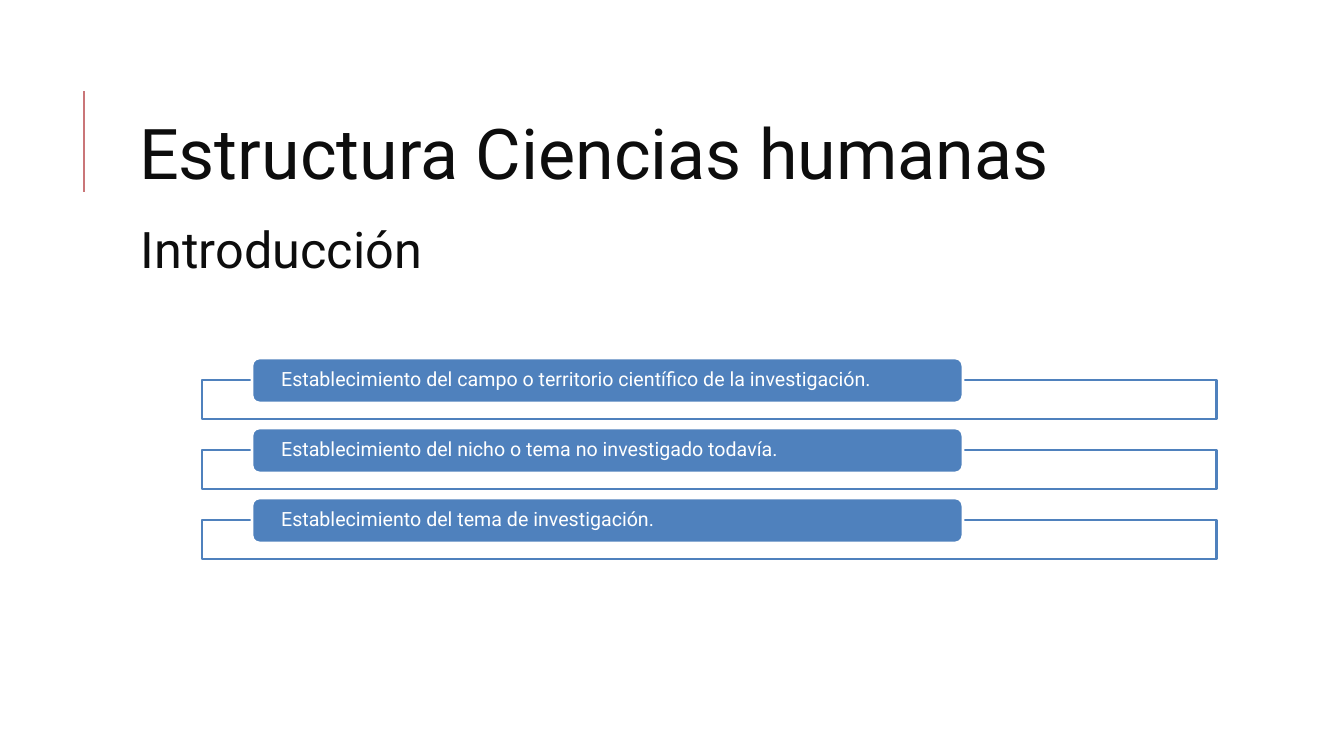
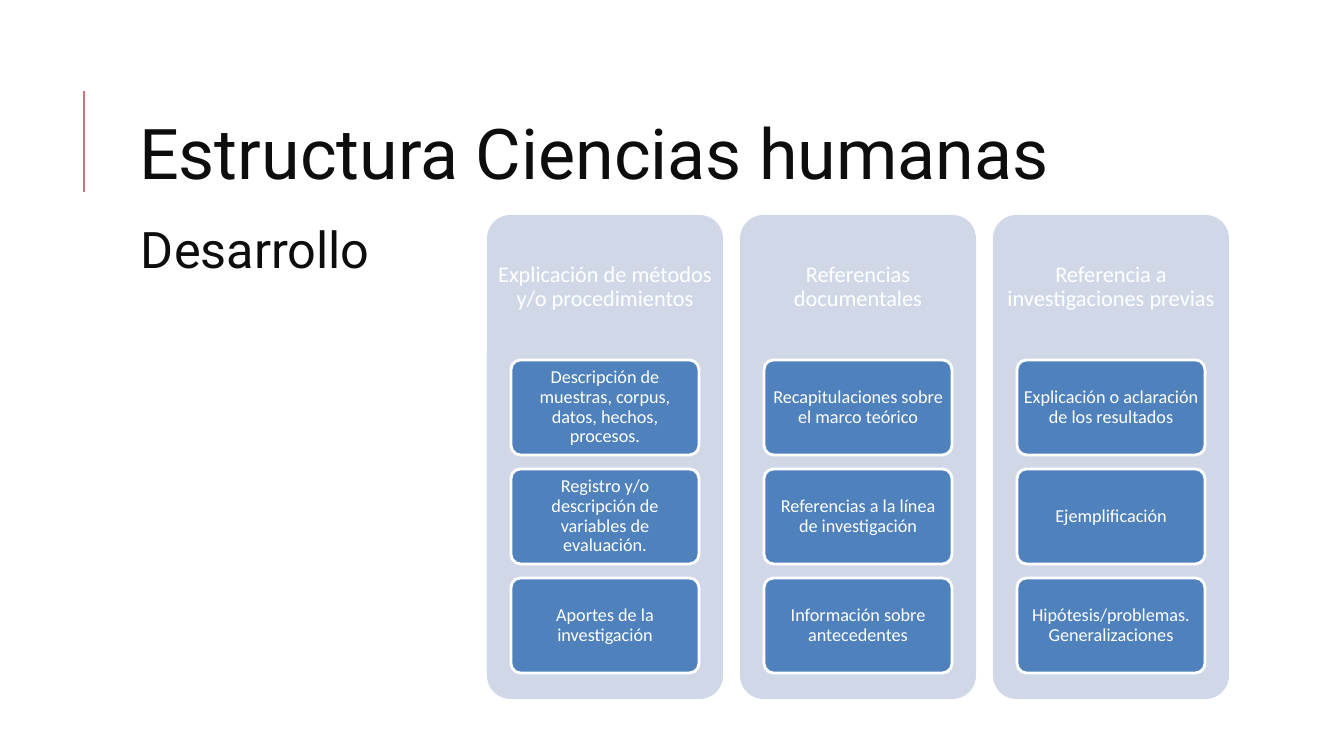
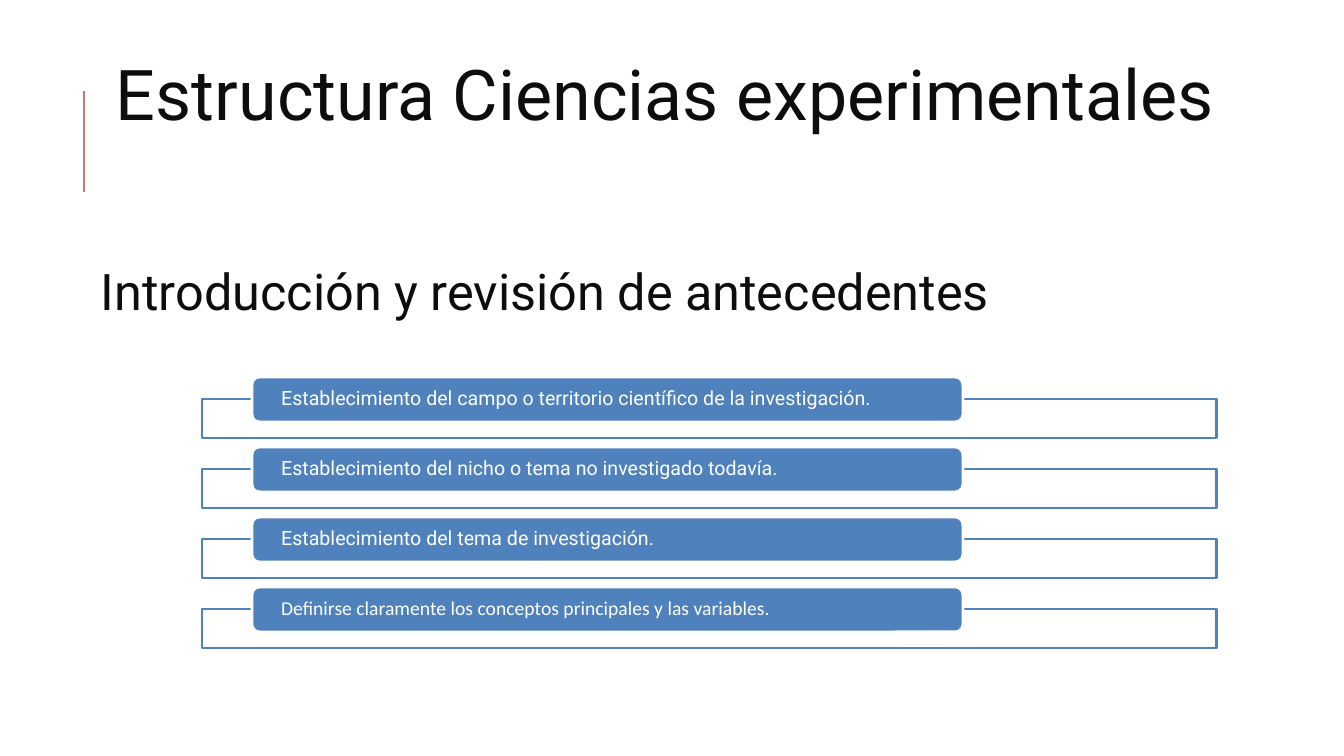
from dataclasses import dataclass

from pptx import Presentation
from pptx.dml.color import RGBColor
from pptx.enum.shapes import MSO_CONNECTOR as Connector, MSO_SHAPE as Shape
from pptx.enum.text import MSO_ANCHOR as Anchor, PP_ALIGN as Align
from pptx.oxml.ns import qn
from pptx.util import Emu, Pt
from lxml.etree import SubElement


@dataclass(frozen=True)
class Theme:
    ink: str = "0D0D0D"
    white: str = "FFFFFF"
    blue: str = "4F81BD"
    pale: str = "D0D8E8"
    accent: str = "CA7678"
    display: str = "Roboto"
    plain: str = "Calibri"
    heading: int = 50
    title: int = 36
    column: int = 16
    row: int = 14
    card: int = 13


theme = Theme()
SCALE = 914400 / 100.8


def px(*lengths):
    return [Emu(round(length * SCALE)) for length in lengths]


def write(box, text, font, size, colour, align=Align.LEFT, anchor=Anchor.MIDDLE,
          inset=(0, 0), spacing=0.9):
    frame = box.text_frame
    frame.text = text
    frame.word_wrap = True
    frame.vertical_anchor = anchor
    side, edge = px(*inset)
    frame.margin_left = frame.margin_right = side
    frame.margin_top = frame.margin_bottom = edge
    para = frame.paragraphs[0]
    para.alignment = align
    para.line_spacing = spacing
    span = para.runs[0]
    span.font.name = font
    span.font.size = Pt(size)
    span.font.color.rgb = RGBColor.from_string(colour)


def add_box(page, kind, bounds, fill, line=None, radius=None):
    box = page.shapes.add_shape(kind, *px(*bounds))
    box.shadow.inherit = False
    box.fill.solid()
    box.fill.fore_color.rgb = RGBColor.from_string(fill)
    if line:
        box.line.color.rgb = RGBColor.from_string(line)
        box.line.width = Pt(2)
    else:
        box.line.fill.background()
    if radius:
        box.adjustments[0] = radius
    return box


FIELD = "Establecimiento del campo o territorio científico de la investigación."
NICHE = "Establecimiento del nicho o tema no investigado todavía."
TOPIC = "Establecimiento del tema de investigación."
VARIABLES = "Definirse claramente los conceptos principales y las variables."

HUMANITIES = ("Estructura Ciencias humanas", (139, 109, 1101, 169))
EXPERIMENTAL = ("Estructura Ciencias experimentales", (116, 51, 1101, 254))

slides = [
    (HUMANITIES, ("Introducción", (141, 218, 378, 61)), 358,
     [(FIELD, theme.display), (NICHE, theme.display), (TOPIC, theme.display)], []),
    (HUMANITIES, ("Desarrollo", (141, 218, 378, 61)), 0, [], [
        ("Explicación de métodos y/o procedimientos", [
            "Descripción de muestras, corpus, datos, hechos, procesos.",
            "Registro y/o descripción de variables de evaluación.",
            "Aportes de la investigación"]),
        ("Referencias documentales", [
            "Recapitulaciones sobre el marco teórico",
            "Referencias a la línea de investigación",
            "Información sobre antecedentes"]),
        ("Referencia a investigaciones previas", [
            "Explicación o aclaración de los resultados",
            "Ejemplificación",
            "Hipótesis/problemas. Generalizaciones"]),
    ]),
    (EXPERIMENTAL, ("Introducción y revisión de antecedentes", (101, 260, 1103, 76)), 377,
     [(FIELD, theme.display), (NICHE, theme.display), (TOPIC, theme.display),
      (VARIABLES, theme.plain)], []),
]

deck = Presentation()
deck.slide_width, deck.slide_height = px(1344, 756)
layout = deck.slide_layouts[5]

for heading, title, first_row, rows, columns in slides:
    page = deck.slides.add_slide(layout)

    accent_line = page.shapes.add_connector(Connector.STRAIGHT, *px(84, 192, 84, 91))
    accent_line.line.color.rgb = RGBColor.from_string(theme.accent)
    accent_line.line.width = Pt(1.5)
    SubElement(accent_line.element.spPr, qn("a:effectLst"))

    title_text, title_bounds = title
    title_box = page.shapes.title
    (title_box.left, title_box.top,
     title_box.width, title_box.height) = px(*title_bounds)
    write(title_box, title_text, theme.display, theme.title, theme.ink,
          anchor=Anchor.TOP, spacing=1.0)

    heading_text, heading_bounds = heading
    heading_box = page.shapes.add_textbox(*px(*heading_bounds))
    write(heading_box, heading_text, theme.display, theme.heading, theme.ink,
          anchor=Anchor.TOP, spacing=1.0)

    for index, (text, font) in enumerate(rows):
        top = first_row + 70 * index
        add_box(page, Shape.RECTANGLE, (202, top + 22, 1015, 39), theme.white, theme.blue)
        label = add_box(page, Shape.ROUNDED_RECTANGLE, (252, top, 711, 45),
                        theme.blue, theme.white)
        write(label, text, font, theme.row, theme.white, inset=(27, 0))

    for index, (text, cards) in enumerate(columns):
        left = 487 + 253 * index
        add_box(page, Shape.ROUNDED_RECTANGLE, (left, 215, 236, 484), theme.pale, radius=0.1)
        caption = page.shapes.add_textbox(*px(left, 215, 236, 145))
        write(caption, text, theme.plain, theme.column, theme.white, Align.CENTER, inset=(7, 7))
        for place, card_text in enumerate(cards):
            card = add_box(page, Shape.ROUNDED_RECTANGLE,
                           (left + 24, 360 + 109 * place, 188, 95),
                           theme.blue, theme.white, radius=0.1)
            write(card, card_text, theme.plain, theme.card, theme.white,
                  Align.CENTER, inset=(4, 3))

deck.save("out.pptx")
